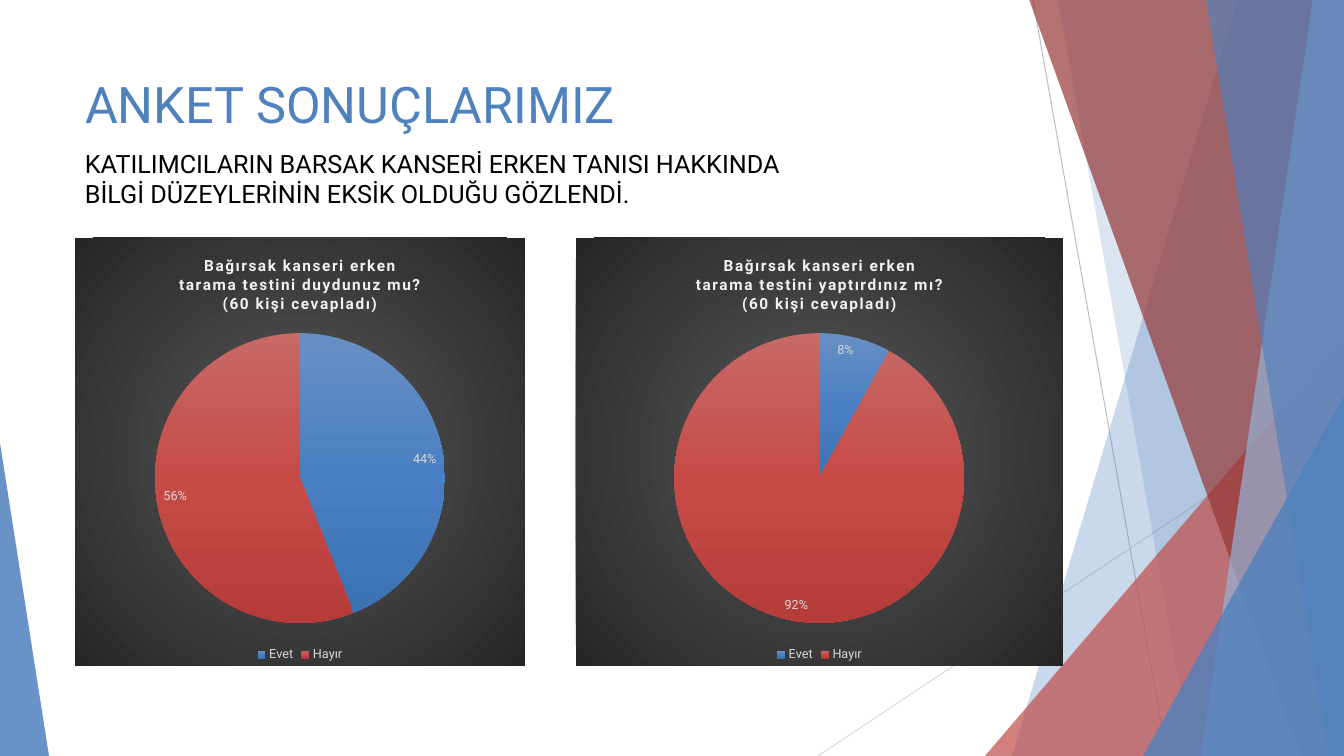
from lxml import etree
from pptx import Presentation
from pptx.chart.data import CategoryChartData
from pptx.dml.color import RGBColor
from pptx.enum.chart import XL_CHART_TYPE, XL_LABEL_POSITION, XL_LEGEND_POSITION
from pptx.enum.shapes import MSO_CONNECTOR, MSO_SHAPE
from pptx.enum.text import MSO_ANCHOR, MSO_AUTO_SIZE, PP_ALIGN
from pptx.oxml import parse_xml
from pptx.oxml.ns import nsdecls, qn
from pptx.util import Pt

PIE = XL_CHART_TYPE.PIE
INSIDE_END = XL_LABEL_POSITION.INSIDE_END
BOTTOM = XL_LEGEND_POSITION.BOTTOM
STRAIGHT = MSO_CONNECTOR.STRAIGHT
TRIANGLE = MSO_SHAPE.ISOSCELES_TRIANGLE
TOP = MSO_ANCHOR.TOP
NO_FIT = MSO_AUTO_SIZE.NONE
LEFT = PP_ALIGN.LEFT

BLUE = RGBColor(0x4F, 0x81, 0xBD)
PALE_BLUE = RGBColor(0x95, 0xB3, 0xD7)
RED = RGBColor(0xC0, 0x50, 0x4D)
DARK_RED = RGBColor(0x95, 0x37, 0x35)
GREY = RGBColor(0xBF, 0xBF, 0xBF)
LIGHT_GREY = RGBColor(0xD9, 0xD9, 0xD9)
OFF_WHITE = RGBColor(0xF2, 0xF2, 0xF2)
BLACK = RGBColor(0, 0, 0)
CHART_BACK = [RGBColor(0x59, 0x59, 0x59), RGBColor(0x26, 0x26, 0x26)]
SLICES = [
    [RGBColor(0x68, 0x8F, 0xC5), RGBColor(0x4A, 0x80, 0xC3), RGBColor(0x3B, 0x72, 0xB3)],
    [RGBColor(0xC7, 0x69, 0x67), RGBColor(0xC6, 0x4B, 0x47), RGBColor(0xB6, 0x3C, 0x39)],
]
RADIAL = '<a:path path="circle"><a:fillToRect l="50000" t="50000" r="50000" b="50000"/></a:path>'
DOWNWARD = '<a:lin ang="5400000" scaled="0"/>'
FONT = "Roboto"
PX = 914400 / 100.8
W, H = 1344, 756


def add_text(p, text, size, colour, bold=False, spacing=0):
    r = p.add_run()
    r.text = text
    r.font.name = FONT
    r.font.size = Pt(size)
    r.font.bold = bold
    r.font.color.rgb = colour
    if spacing:
        r.font._element.set("spc", str(spacing))


def add_gradient(sp_pr, colours, direction):
    stops = "".join(
        f'<a:gs pos="{100000 * i // (len(colours) - 1)}"><a:srgbClr val="{c}"/></a:gs>'
        for i, c in enumerate(colours))
    sp_pr.insert(0, parse_xml(
        f'<a:gradFill {nsdecls("a")} rotWithShape="1"><a:gsLst>{stops}</a:gsLst>{direction}</a:gradFill>'))


prs = Presentation()
prs.slide_width, prs.slide_height = round(W * PX), round(H * PX)
s = prs.slides.add_slide(prs.slide_layouts[5])

for x1, y1, x2, y2, colour in [(1033, 0, 1167, H, GREY), (W, 406, 818, H, LIGHT_GREY)]:
    line = s.shapes.add_connector(STRAIGHT, *(round(v * PX) for v in (x1, y1, x2, y2)))
    line.line.color.rgb = colour
    line.line.width = Pt(0.75)
    etree.SubElement(line._element.spPr, qn("a:effectLst"))

facets = [
    (BLUE, 30, 1238, 1012),
    (BLUE, 20, 1058, 1192),
    (RED, 72, 985, 336, 359, 1),
    (DARK_RED, 70, 1029, 1301),
    (PALE_BLUE, 70, 1313, 1201),
    (BLUE, 65, 1206, 1329),
    (BLUE, 80, 1143, 396, 201, 1),
    (BLUE, 85, 0, 443, 49, 0),
]
for colour, opacity, *geometry in facets:
    if len(geometry) == 2:
        top_x, bottom_x = geometry
        fb = s.shapes.build_freeform(top_x, -1, scale=PX)
        fb.add_line_segments([(W, -1), (W, H), (bottom_x, H)], close=True)
        sp = fb.convert_to_shape()
    else:
        x, y, w, peak = geometry
        sp = s.shapes.add_shape(TRIANGLE, *(round(v * PX) for v in (x, y, w, H - y)))
        sp.adjustments[0] = peak
    sp.shadow.inherit = False
    sp.line.fill.background()
    sp.fill.solid()
    sp.fill.fore_color.rgb = colour
    clr = sp._element.spPr.find(qn("a:solidFill"))[0]
    etree.SubElement(clr, qn("a:alpha")).set("val", str(opacity * 1000))

title = s.shapes.title
title.left, title.top, title.width, title.height = (round(v * PX) for v in (75, 68, 948, 93))
tf = title.text_frame
tf.auto_size = NO_FIT
tf.vertical_anchor = TOP
tf.paragraphs[0].alignment = LEFT
add_text(tf.paragraphs[0], "ANKET SONUÇLARIMIZ", 36, BLUE)

charts = [
    (75, 450, "tarama testini duydunuz mu?", (44, 56)),
    (576, 487, "tarama testini yaptırdınız mı?", (8, 92)),
]
chart_top, chart_height, pie_top, pie_size = 238, 428, 95, 290
for x, w, question, values in charts:
    data = CategoryChartData()
    data.categories = ["Evet", "Hayır"]
    data.add_series("Series 1", values)
    box = (round(v * PX) for v in (x, chart_top, w, chart_height))
    chart = s.shapes.add_chart(PIE, *box, data).chart
    chart.font.name = FONT
    chart.font.size = Pt(10)
    chart.font.color.rgb = BLACK

    tf = chart.chart_title.text_frame
    for i, text in enumerate(["Bağırsak kanseri erken", question, "(60 kişi cevapladı)"]):
        p = tf.add_paragraph() if i else tf.paragraphs[0]
        add_text(p, text, 11, OFF_WHITE, bold=True, spacing=100)
    chart.chart_title.include_in_layout = False

    chart.has_legend = True
    chart.legend.position = BOTTOM
    chart.legend.include_in_layout = False
    plot = chart.plots[0]
    plot.vary_by_categories = True
    plot.has_data_labels = True
    labels = plot.data_labels
    labels.show_percentage = True
    labels.show_value = False
    labels.number_format = "0%"
    labels.number_format_is_linked = False
    labels.position = INSIDE_END
    for font in (chart.legend.font, labels.font):
        font.name = FONT
        font.size = Pt(9)
        font.color.rgb = LIGHT_GREY

    for i, colours in enumerate(SLICES):
        plot.series[0].points[i].format.line.fill.background()
        add_gradient(chart.element.xpath(".//c:dPt/c:spPr")[i], colours, DOWNWARD)

    sp_pr = parse_xml(f'<c:spPr {nsdecls("c", "a")}><a:ln><a:noFill/></a:ln></c:spPr>')
    add_gradient(sp_pr, CHART_BACK, RADIAL)
    chart.element.xpath("c:txPr")[0].addprevious(sp_pr)

    plot_area = chart.element.xpath("c:chart/c:plotArea")[0]
    for layout in plot_area.findall(qn("c:layout")):
        plot_area.remove(layout)
    layout = parse_xml(
        f'<c:layout {nsdecls("c")}><c:manualLayout><c:layoutTarget val="inner"/>'
        '<c:xMode val="edge"/><c:yMode val="edge"/>'
        f'<c:x val="{(1 - pie_size / w) / 2:.3f}"/><c:y val="{pie_top / chart_height:.3f}"/>'
        f'<c:w val="{pie_size / w:.3f}"/><c:h val="{pie_size / chart_height:.3f}"/>'
        '</c:manualLayout></c:layout>')
    plot_area.insert(0, layout)

finding = s.shapes.add_textbox(*(round(v * PX) for v in (75, 143, 733, 72)))
tf = finding.text_frame
tf.word_wrap = True
add_text(tf.paragraphs[0],
         "KATILIMCILARIN BARSAK KANSERİ ERKEN TANISI HAKKINDA BİLGİ DÜZEYLERİNİN EKSİK OLDUĞU GÖZLENDİ.",
         18, BLACK)

prs.save("out.pptx")
